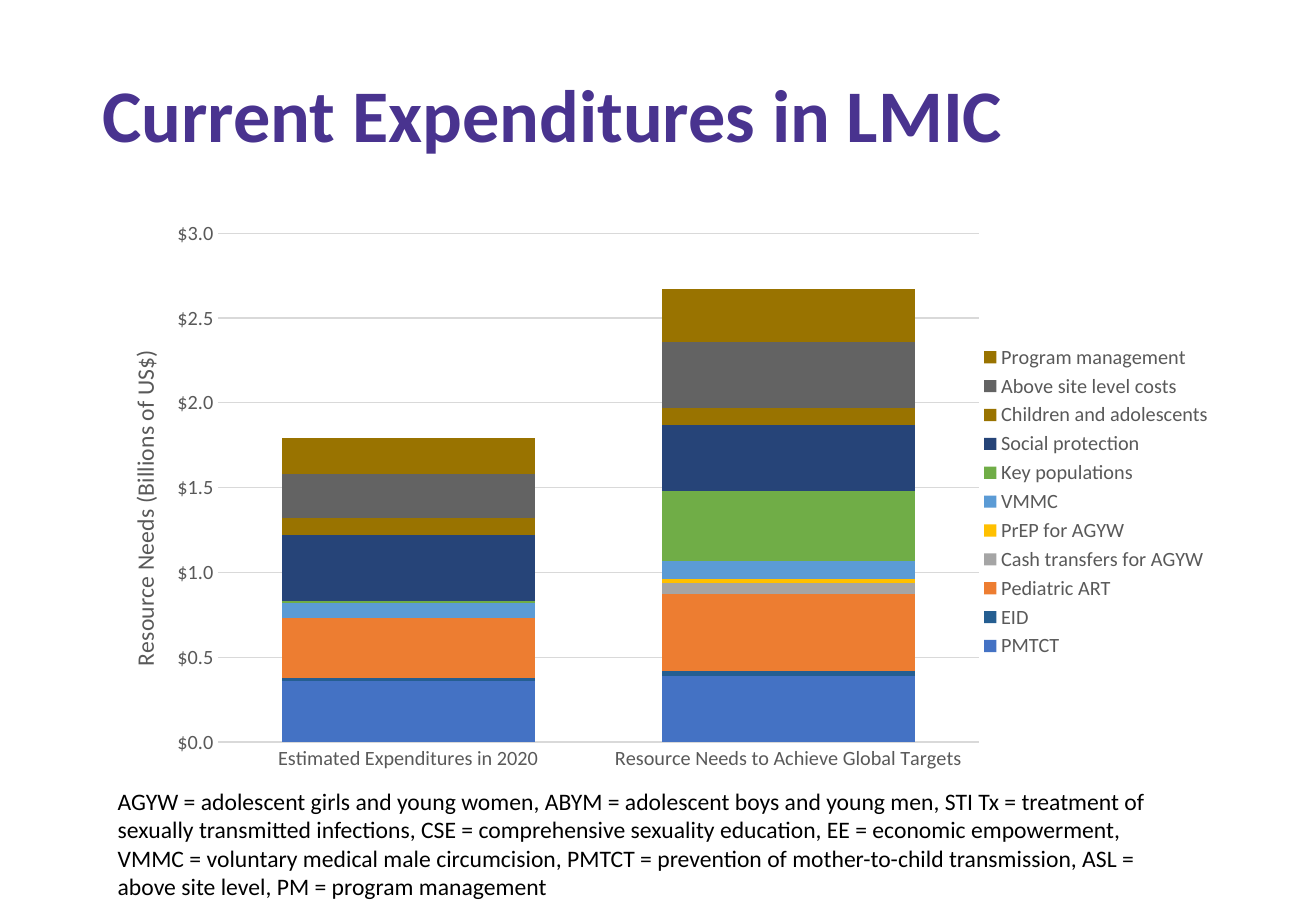
from typing import NamedTuple

import pptx
import pptx.chart.data
import pptx.dml.color
import pptx.enum.chart
import pptx.enum.text
import pptx.oxml
import pptx.oxml.ns
import pptx.util

WIDTH, HEIGHT = 10.83, 7.5
FONT = "Calibri"
COLORS = {
    "title": "49338F", "text": "000000", "label": "595959", "grid": "D9D9D9",
    "blue": "4472C4", "teal": "255E91", "orange": "ED7D31", "silver": "A5A5A5",
    "yellow": "FFC000", "sky": "5B9BD5", "green": "70AD47", "navy": "264478",
    "brown": "997300", "gray": "636363",
}


class Cost(NamedTuple):
    name: str
    spent: float
    needed: float
    color: str


CATEGORIES = ["Estimated Expenditures in 2020",
              "Resource Needs to Achieve Global Targets"]
COSTS = [
    Cost("PMTCT", 0.36, 0.39, "blue"),
    Cost("EID", 0.02, 0.03, "teal"),
    Cost("Pediatric ART", 0.35, 0.45, "orange"),
    Cost("Cash transfers for AGYW", 0, 0.07, "silver"),
    Cost("PrEP for AGYW", 0, 0.02, "yellow"),
    Cost("VMMC", 0.09, 0.11, "sky"),
    Cost("Key populations", 0.01, 0.41, "green"),
    Cost("Social protection", 0.39, 0.39, "navy"),
    Cost("Children and adolescents", 0.1, 0.1, "brown"),
    Cost("Above site level costs", 0.26, 0.39, "gray"),
    Cost("Program management", 0.21, 0.31, "brown"),
]
ABBREVIATIONS = (
    "AGYW = adolescent girls and young women, ABYM = adolescent boys and young men, "
    "STI Tx = treatment of sexually transmitted infections, "
    "CSE = comprehensive sexuality education, EE = economic empowerment, "
    "VMMC = voluntary medical male circumcision, "
    "PMTCT = prevention of mother-to-child transmission, "
    "ASL = above site level, PM = program management"
)


def rgb(name: str) -> pptx.dml.color.RGBColor:
    return pptx.dml.color.RGBColor.from_string(COLORS[name])


def box(left: float, top: float, width: float, height: float) -> list[int]:
    return [pptx.util.Inches(v) for v in (left, top, width, height)]


def style_font(font, size: float, color: str, bold: bool = False) -> None:
    font.name = FONT
    font.size = pptx.util.Pt(size)
    font.bold = bold
    font.color.rgb = rgb(color)


def style_line(line) -> None:
    line.color.rgb = rgb("grid")
    line.width = pptx.util.Pt(0.75)


def set_layout(parent, index: int, **settings) -> None:
    """Give a chart part a manual layout, in shares of the chart's size."""
    for old in parent.findall(pptx.oxml.ns.qn("c:layout")):
        parent.remove(old)
    items = "".join(f'<c:{tag} val="{val}"/>' for tag, val in settings.items())
    parent.insert(index, pptx.oxml.parse_xml(
        f'<c:layout {pptx.oxml.ns.nsdecls("c")}>'
        f"<c:manualLayout>{items}</c:manualLayout></c:layout>"))


def add_title(slide) -> None:
    sp = slide.shapes.title
    sp.left, sp.top, sp.width, sp.height = box(0.74, 0.25, 9.34, 1.45)
    tf = sp.text_frame
    tf.text = "Current Expenditures in LMIC"
    tf.vertical_anchor = pptx.enum.text.MSO_ANCHOR.MIDDLE
    p = tf.paragraphs[0]
    p.alignment = pptx.enum.text.PP_ALIGN.LEFT
    p.line_spacing = 0.9
    style_font(p.font, 44, "title", bold=True)


def style_axes(chart) -> None:
    tick_none = pptx.enum.chart.XL_TICK_MARK.NONE
    for axis in (chart.category_axis, chart.value_axis):
        axis.major_tick_mark = axis.minor_tick_mark = tick_none
        style_font(axis.tick_labels.font, 12, "label")
    style_line(chart.category_axis.format.line)

    axis = chart.value_axis
    axis.minimum_scale, axis.maximum_scale, axis.major_unit = 0, 3, 0.5
    axis.tick_labels.number_format = '"$"#,##0.0'
    axis.tick_labels.number_format_is_linked = False
    axis.format.line.fill.background()
    style_line(axis.major_gridlines.format.line)
    title = axis.axis_title
    title.text_frame.text = "Resource Needs (Billions of US$)"
    style_font(title.text_frame.paragraphs[0].font, 14, "label")
    set_layout(title._element, 1, xMode="edge", yMode="edge", x=0.03, y=0.23)


def add_cost_chart(slide) -> None:
    data = pptx.chart.data.CategoryChartData(number_format="0.00")
    data.categories = CATEGORIES
    for cost in COSTS:
        data.add_series(cost.name, (cost.spent, cost.needed))
    chart = slide.shapes.add_chart(
        pptx.enum.chart.XL_CHART_TYPE.COLUMN_STACKED,
        *box(0.74, 1.75, 9.34, 4.76), data).chart
    chart.has_title = False
    style_font(chart.font, 10, "text")

    plot = chart.plots[0]
    plot.gap_width, plot.overlap = 50, 100
    plot.vary_by_categories = False
    for series, cost in zip(plot.series, COSTS):
        series.format.fill.solid()
        series.format.fill.fore_color.rgb = rgb(cost.color)
    style_axes(chart)

    chart.has_legend = True
    chart.legend.position = pptx.enum.chart.XL_LEGEND_POSITION.RIGHT
    chart.legend.include_in_layout = False
    style_font(chart.legend.font, 12, "label")
    plot_area = chart._chartSpace.find(".//" + pptx.oxml.ns.qn("c:plotArea"))
    set_layout(plot_area, 0, layoutTarget="inner", xMode="edge", yMode="edge",
               x=0.113, y=0.036, w=0.67, h=0.88)


def add_abbreviations(slide) -> None:
    tf = slide.shapes.add_textbox(*box(0.87, 6.43, 8.8, 1.04)).text_frame
    tf.word_wrap = True
    tf.text = ABBREVIATIONS
    style_font(tf.paragraphs[0].font, 14, "text")


def main() -> None:
    prs = pptx.Presentation()
    prs.slide_width = pptx.util.Inches(WIDTH)
    prs.slide_height = pptx.util.Inches(HEIGHT)
    slide = prs.slides.add_slide(prs.slide_layouts.get_by_name("Title Only"))
    add_title(slide)
    add_cost_chart(slide)
    add_abbreviations(slide)
    prs.save("out.pptx")


if __name__ == "__main__":
    main()
